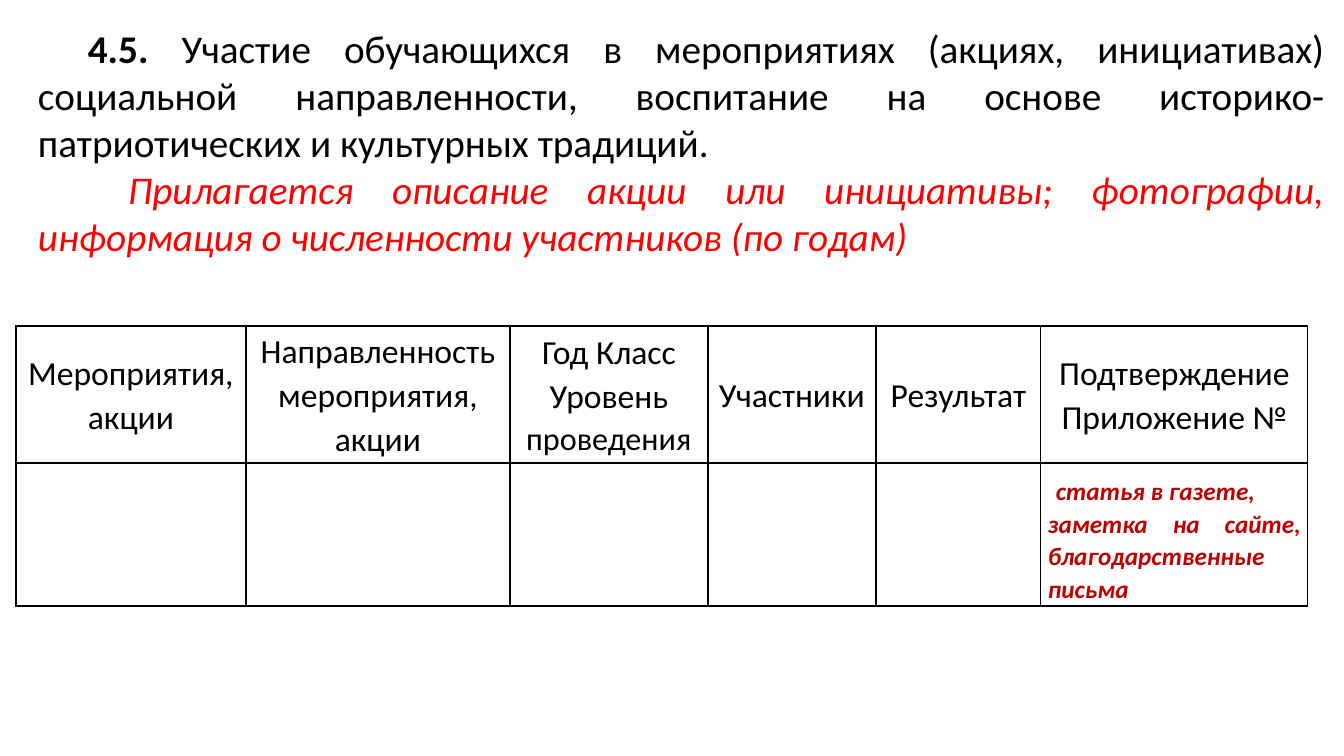
from dataclasses import dataclass

from lxml.etree import SubElement
from pptx import Presentation
from pptx.dml.color import RGBColor as Rgb
from pptx.enum.text import MSO_ANCHOR as Anchor, PP_ALIGN as Align
from pptx.oxml.ns import qn
from pptx.util import Pt


@dataclass(frozen=True)
class Theme:
    font: str = "Calibri"
    ink: str = "000000"
    red: str = "FF0000"
    dark: str = "C00000"
    lead: int = 28
    head: int = 24
    tight: int = 23
    note: int = 18
    rule: int = 1
    line: float = 1.07


T = Theme()
SIZE = (1344, 756)

# Each paragraph: first-line indent in px, then its runs (text, style)
LEAD_BOX = (28, 19, 1306, 295)
BODY = dict(size=T.lead)
LEAD = [
    (50, [
        ("4.5. ", dict(BODY, bold=True)),
        ("Участие обучающихся в мероприятиях (акциях, инициативах) "
         "социальной направленности, воспитание на основе "
         "историко-патриотических и культурных традиций.", BODY),
    ]),
    (90, [
        ("Прилагается описание акции или инициативы; фотографии, "
         "информация о численности участников (по годам)",
         dict(BODY, color=T.red, italic=True)),
    ]),
]

GRID_AT = (16, 326)
COLS = [230, 264, 198, 168, 165, 267]
ROWS = [137, 143]
PAD = 7
NOTE_TOP = 11
HEAD = dict(size=T.head)
HEADS = [
    [["Мероприятия,"], ["акции"]],
    [["Направленность"], ["мероприятия,"], ["акции"]],
    [["Год Класс"], ["Уровень ", ("проведения", dict(size=T.tight))]],
    [["Участники"]],
    [["Результат"]],
    [["Подтверждение"], ["Приложение №"]],
]
MARK = dict(size=T.note, color=T.dark, bold=True, italic=True)
NOTES = [
    (8, [("статья в газете,", MARK)]),
    (0, [("заметка на сайте, благодарственные письма", MARK)]),
]


def px(n):
    return round(n * 914400 / 100.8)


def add_run(para, text, size, color=T.ink, bold=False, italic=False):
    run = para.add_run()
    run.text = text
    font = run.font
    font.name, font.size = T.font, Pt(size)
    font.bold, font.italic = bold, italic
    font.color.rgb = Rgb.from_string(color)


def write(frame, paras, align, line=1.0):
    for i, (indent, runs) in enumerate(paras):
        para = frame.add_paragraph() if i else frame.paragraphs[0]
        para.alignment, para.line_spacing = align, line
        if indent:
            para._p.get_or_add_pPr().set("indent", str(px(indent)))
        for text, style in runs:
            add_run(para, text, **style)


def add_border(cell):
    props = cell._tc.get_or_add_tcPr()
    for side in ("lnL", "lnR", "lnT", "lnB"):
        edge = SubElement(props, qn("a:" + side), w=str(Pt(T.rule)))
        fill = SubElement(edge, qn("a:solidFill"))
        SubElement(fill, qn("a:srgbClr"), val=T.ink)


def add_lead(slide):
    box = slide.shapes.add_textbox(*map(px, LEAD_BOX))
    frame = box.text_frame
    frame.word_wrap = True
    frame.vertical_anchor = Anchor.TOP
    write(frame, LEAD, Align.JUSTIFY)


def add_grid(slide):
    shape = slide.shapes.add_table(
        len(ROWS), len(COLS), *map(px, (*GRID_AT, sum(COLS), sum(ROWS))))
    table = shape.table
    table.first_row = table.horz_banding = False
    for col, width in zip(table.columns, COLS):
        col.width = px(width)
    for row, height in zip(table.rows, ROWS):
        row.height = px(height)
    for cell in table.iter_cells():
        cell.margin_left = cell.margin_right = px(PAD)
        cell.margin_top = cell.margin_bottom = 0
        add_border(cell)
        cell.fill.background()
    for i, lines in enumerate(HEADS):
        cell = table.cell(0, i)
        cell.vertical_anchor = Anchor.MIDDLE
        paras = [(0, [(r, HEAD) if isinstance(r, str) else r for r in line])
                 for line in lines]
        write(cell.text_frame, paras, Align.CENTER, T.line)
    last = table.cell(1, len(COLS) - 1)
    last.margin_top = px(NOTE_TOP)
    write(last.text_frame, NOTES, Align.JUSTIFY, T.line)


def main():
    deck = Presentation()
    deck.slide_width, deck.slide_height = map(px, SIZE)
    slide = deck.slides.add_slide(deck.slide_layouts.get_by_name("Blank"))
    add_grid(slide)
    add_lead(slide)
    deck.save("out.pptx")


if __name__ == "__main__":
    main()
